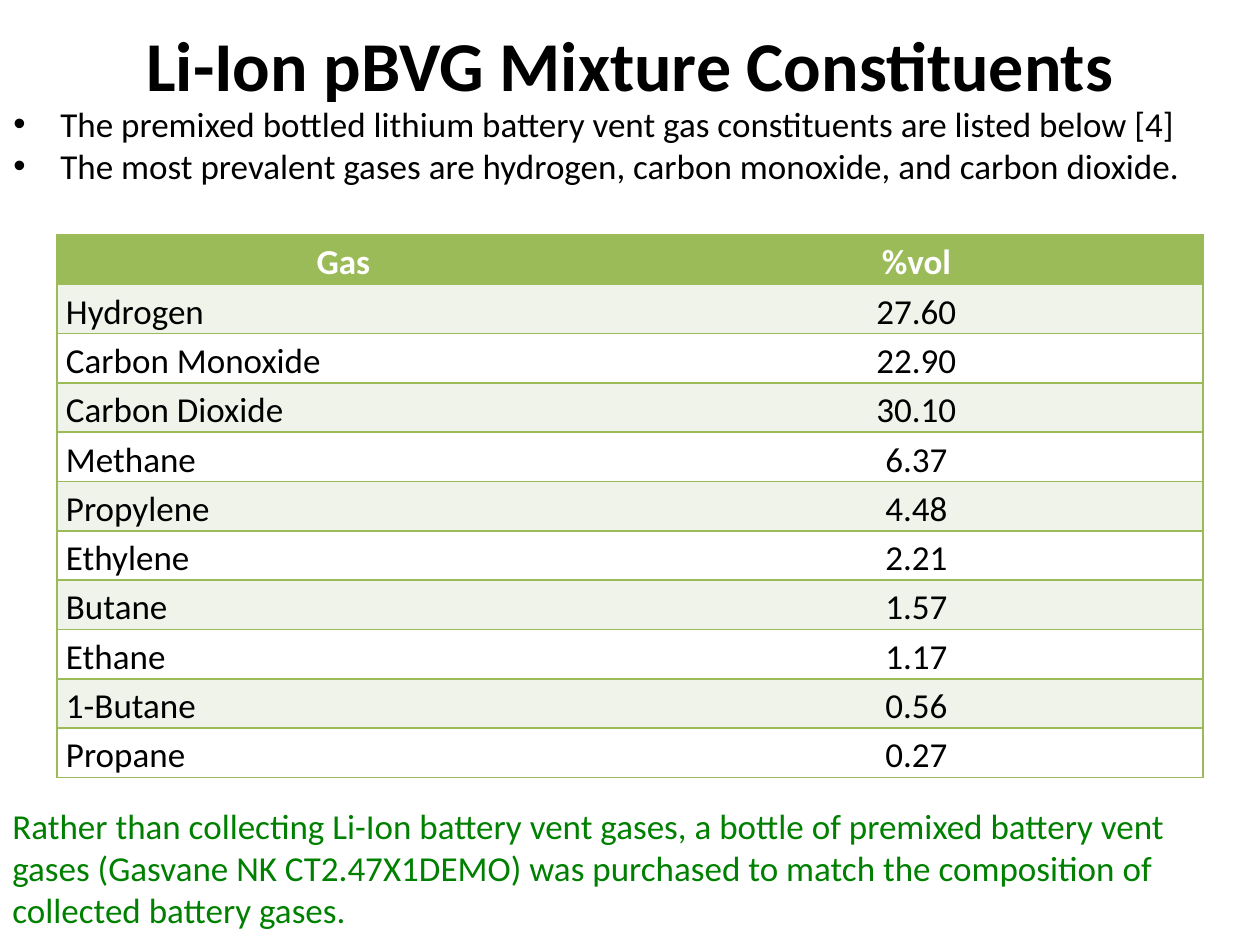
"""Build the Li-Ion vent gas mixture slide."""
import pptx
import pptx.dml.color
import pptx.enum.text
import pptx.oxml
import pptx.oxml.ns
import pptx.util
from lxml import etree

COLORS = {"black": "000000", "white": "FFFFFF", "green": "9BBB59",
          "band": "EFF3EA", "note": "008000"}
FONT = "Calibri"
TITLE = "Li-Ion pBVG Mixture Constituents"
BULLETS = [
    "The premixed bottled lithium battery vent gas constituents are listed below [4]",
    "The most prevalent gases are hydrogen, carbon monoxide, and carbon dioxide.",
]
GASES = [
    ("Gas", "%vol"),
    ("Hydrogen", "27.60"),
    ("Carbon Monoxide", "22.90"),
    ("Carbon Dioxide", "30.10"),
    ("Methane", "6.37"),
    ("Propylene", "4.48"),
    ("Ethylene", "2.21"),
    ("Butane", "1.57"),
    ("Ethane", "1.17"),
    ("1-Butane", "0.56"),
    ("Propane", "0.27"),
]
NOTE = ("Rather than collecting Li-Ion battery vent gases, a bottle of premixed "
        "battery vent gases (Gasvane NK CT2.47X1DEMO) was purchased to match the "
        "composition of collected battery gases.")

TITLE_BOX = (0, 1, 1260, 126)
BULLET_BOX = (1, 96, 1258, 97)
NOTE_BOX = (0, 798, 1260, 140)
TABLE_LEFT, TABLE_TOP, COL_W, ROW_H = 57, 235, 573, 49
CELL_INSET, BULLET_INDENT = 9, 47

ALIGN = pptx.enum.text.PP_ALIGN
ANCHOR = pptx.enum.text.MSO_ANCHOR


def px(n):
    return pptx.util.Emu(n * 914400 // 126)


def add_run(p, text, size=20, color="black", bold=False):
    r = p.add_run()
    r.text = text
    r.font.name = FONT
    r.font.size = pptx.util.Pt(size)
    r.font.bold = bold
    r.font.color.rgb = pptx.dml.color.RGBColor.from_string(COLORS[color])


def add_text(s, box, lines, align=ALIGN.LEFT, anchor=ANCHOR.TOP, bullet=False, **style):
    tf = s.shapes.add_textbox(*map(px, box)).text_frame
    tf.word_wrap = True
    tf.vertical_anchor = anchor
    for i, line in enumerate(lines):
        p = tf.add_paragraph() if i else tf.paragraphs[0]
        p.alignment = align
        add_run(p, line, **style)
        if bullet:
            pPr = p._p.get_or_add_pPr()
            pPr.set("marL", str(px(BULLET_INDENT)))
            pPr.set("indent", str(-px(BULLET_INDENT)))
            ns = pptx.oxml.ns.qn
            etree.SubElement(pPr, ns("a:buFont")).set("typeface", "Arial")
            etree.SubElement(pPr, ns("a:buChar")).set("char", "•")


def set_borders(cell, hidden):
    tcPr = cell._tc.get_or_add_tcPr()
    for side in "LRTB":
        fill = ("<a:noFill/>" if side == hidden else
                f'<a:solidFill><a:srgbClr val="{COLORS["green"]}"/></a:solidFill>')
        tcPr.append(pptx.oxml.parse_xml(
            f'<a:ln{side} {pptx.oxml.ns.nsdecls("a")} w="12700">{fill}</a:ln{side}>'))


def add_gas_table(s):
    table = s.shapes.add_table(
        len(GASES), 2, px(TABLE_LEFT), px(TABLE_TOP),
        px(2 * COL_W), px(ROW_H * len(GASES))).table
    table.first_row = table.horz_banding = False
    for i, row in enumerate(GASES):
        table.rows[i].height = px(ROW_H)
        header = i == 0
        fill = "green" if header else "band" if i % 2 else "white"
        for j, text in enumerate(row):
            cell = table.cell(i, j)
            cell.margin_left = cell.margin_right = px(CELL_INSET)
            cell.margin_top = cell.margin_bottom = 0
            set_borders(cell, "L" if j else "R")
            cell.fill.solid()
            cell.fill.fore_color.rgb = pptx.dml.color.RGBColor.from_string(COLORS[fill])
            p = cell.text_frame.paragraphs[0]
            p.line_spacing = 1.15
            p.alignment = ALIGN.CENTER if header or j else ALIGN.LEFT
            add_run(p, text, color="white" if header else "black", bold=header)


def main():
    prs = pptx.Presentation()
    prs.slide_width, prs.slide_height = px(1260), px(945)
    s = prs.slides.add_slide(prs.slide_layouts[6])
    add_gas_table(s)
    add_text(s, BULLET_BOX, BULLETS, bullet=True)
    add_text(s, TITLE_BOX, [TITLE], align=ALIGN.CENTER, anchor=ANCHOR.MIDDLE,
             size=40, bold=True)
    add_text(s, NOTE_BOX, [NOTE], color="note")
    prs.save("out.pptx")


if __name__ == "__main__":
    main()
